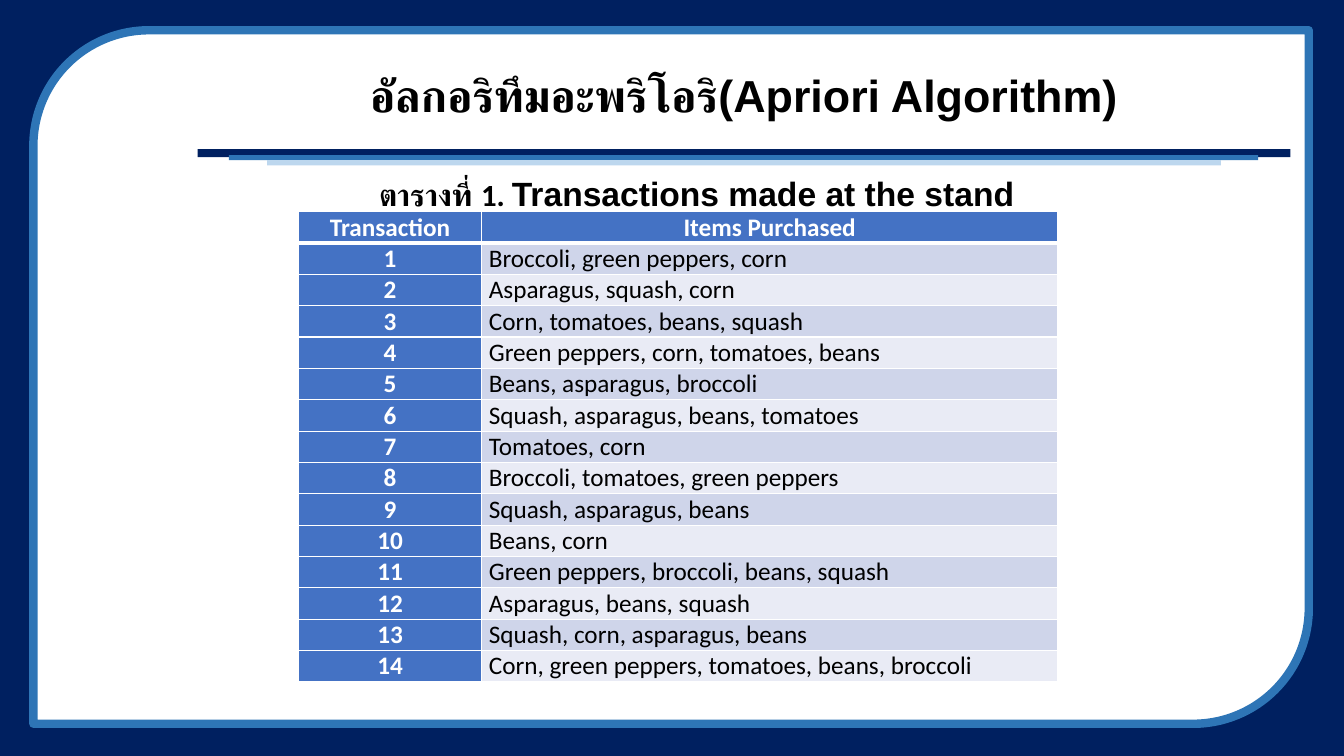
from lxml import etree
from pptx import Presentation
from pptx.dml.color import RGBColor
from pptx.enum.shapes import MSO_SHAPE
from pptx.enum.text import MSO_ANCHOR, PP_ALIGN
from pptx.oxml.ns import qn
from pptx.util import Inches, Pt

RECT = MSO_SHAPE.RECTANGLE
PANEL = MSO_SHAPE.ROUND_2_DIAG_RECTANGLE
CENTER, LEFT = PP_ALIGN.CENTER, PP_ALIGN.LEFT
MIDDLE = MSO_ANCHOR.MIDDLE
WIDTH, HEIGHT = Inches(13.33), Inches(7.5)
NAVY, BLUE, PALE = "002060", "2E75B6", "BDD7EE"
WHITE, BLACK, HEAD = "FFFFFF", "000000", "4472C4"
BANDS = ("CFD5EA", "E9EBF5")
RULES = [
    ((14.7, 19.73, 81.32, 1.07), NAVY),
    ((17.03, 20.53, 76.59, 0.67), BLUE),
    ((19.88, 21.2, 70.97, 0.67), PALE),
]
ITEMS = [
    "Broccoli, green peppers, corn",
    "Asparagus, squash, corn",
    "Corn, tomatoes, beans, squash",
    "Green peppers, corn, tomatoes, beans",
    "Beans, asparagus, broccoli",
    "Squash, asparagus, beans, tomatoes",
    "Tomatoes, corn",
    "Broccoli, tomatoes, green peppers",
    "Squash, asparagus, beans",
    "Beans, corn",
    "Green peppers, broccoli, beans, squash",
    "Asparagus, beans, squash",
    "Squash, corn, asparagus, beans",
    "Corn, green peppers, tomatoes, beans, broccoli",
]


def color(code):
    """Turn a hex string into a colour."""
    return RGBColor.from_string(code)


def place(box):
    """Turn percentages of the slide into left, top, width and height."""
    sides = (WIDTH, HEIGHT, WIDTH, HEIGHT)
    return [round(side * part / 100) for side, part in zip(sides, box)]


def style(font, name, size, code, bold=True):
    """Format a font."""
    font.name, font.size, font.bold = name, Pt(size), bold
    font.color.rgb = color(code)


def add_block(slide, kind, box, fill):
    """Add a plain filled shape without outline."""
    block = slide.shapes.add_shape(kind, *place(box))
    block.shadow.inherit = False
    block.fill.solid()
    block.fill.fore_color.rgb = color(fill)
    block.line.fill.background()
    return block


def add_frame(slide):
    """Add the navy ground, the white panel and the rules under the title."""
    add_block(slide, RECT, (0, 0, 100, 100), NAVY)
    panel = add_block(slide, PANEL, (2.48, 4, 94.9, 91.73), WHITE)
    panel.rotation = 180
    panel.line.color.rgb = color(BLUE)
    panel.line.width = Pt(6)
    for box, fill in RULES:
        add_block(slide, RECT, box, fill)


def set_title(slide, text):
    """Fill the title placeholder and bring it to the front."""
    title = slide.shapes.title
    title.element.getparent().append(title.element)
    title.left, title.top, title.width, title.height = place((14.7, 6.53, 81.32, 12.93))
    frame = title.text_frame
    frame.text = text
    frame.word_wrap = True
    frame.vertical_anchor = MIDDLE
    line = frame.paragraphs[0]
    line.alignment, line.line_spacing = CENTER, 0.9
    style(line.runs[0].font, "Arial", 32, BLACK)


def add_caption(slide, parts):
    """Add the table caption from text, font and size parts."""
    frame = slide.shapes.add_textbox(*place((9.3, 21.73, 85.07, 66.4))).text_frame
    frame.word_wrap = True
    line = frame.paragraphs[0]
    line.alignment, line.line_spacing = CENTER, 1.1
    for text, name, size in parts:
        run = line.add_run()
        run.text = text
        style(run.font, name, size, BLACK)


def add_edges(cell, top, bottom):
    """Draw white cell borders, with top and bottom widths in points."""
    props = cell._tc.get_or_add_tcPr()
    for tag, width in (("lnL", 1), ("lnR", 1), ("lnT", top), ("lnB", bottom)):
        edge = etree.SubElement(props, qn("a:" + tag), w=str(Pt(width)))
        fill = etree.SubElement(edge, qn("a:solidFill"))
        etree.SubElement(fill, qn("a:srgbClr"), val=WHITE)


def fill_cell(cell, text, row, col):
    """Write and format one table cell by its row and column."""
    label = row == 0 or col == 0
    add_edges(cell, 3 if row == 1 else 1, 3 if row == 0 else 1)
    cell.fill.solid()
    cell.fill.fore_color.rgb = color(HEAD if label else BANDS[(row - 1) % 2])
    cell.margin_left = cell.margin_right = Inches(0.07)
    cell.margin_top = cell.margin_bottom = 0
    cell.vertical_anchor = MIDDLE
    cell.text = text
    line = cell.text_frame.paragraphs[0]
    line.alignment = CENTER if label else LEFT
    style(line.runs[0].font, "Calibri", 18, WHITE if label else BLACK, label)


def add_grid(slide, rows):
    """Add the table of transactions."""
    box = place((22.2, 28, 56.49, 62.27))
    table = slide.shapes.add_table(len(rows), 2, *box).table
    table.columns[0].width = Inches(1.82)
    table.columns[1].width = box[2] - Inches(1.82)
    for row, texts in enumerate(rows):
        for col, text in enumerate(texts):
            fill_cell(table.cell(row, col), text, row, col)


def main():
    """Build the slide and save it."""
    deck = Presentation()
    deck.slide_width, deck.slide_height = WIDTH, HEIGHT
    slide = deck.slides.add_slide(deck.slide_layouts[5])
    add_frame(slide)
    set_title(slide, "อัลกอริทึมอะพริโอริ(Apriori Algorithm)")
    add_caption(slide, [
        ("ตารางที่ 1. ", "Calibri", 22),
        ("Transactions made at the stand", "Arial", 24),
    ])
    body = [(str(count), text) for count, text in enumerate(ITEMS, 1)]
    add_grid(slide, [("Transaction", "Items Purchased")] + body)
    deck.save("out.pptx")


if __name__ == "__main__":
    main()
